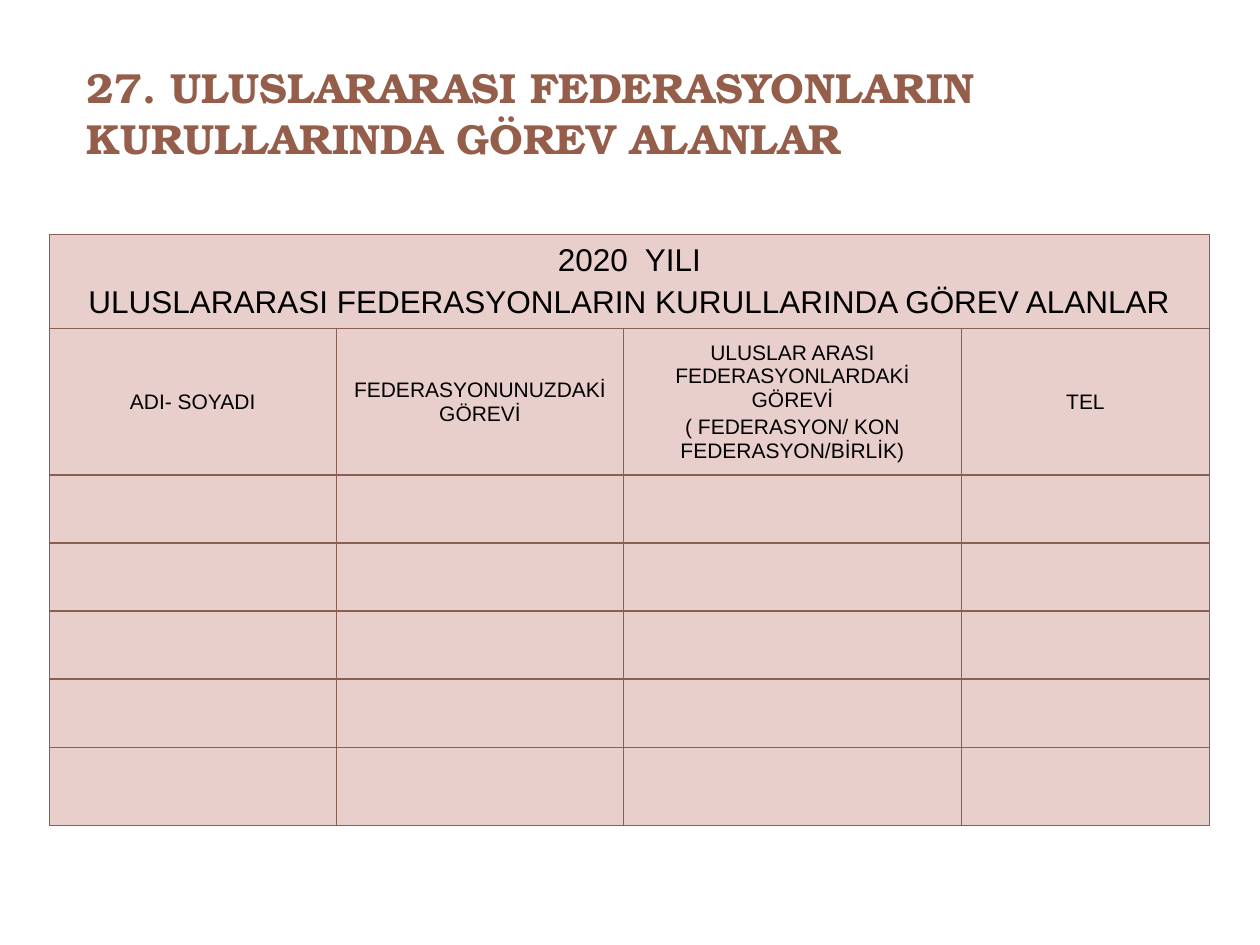
from dataclasses import dataclass

from lxml.etree import SubElement as Sub
from pptx import Presentation
from pptx.dml.color import RGBColor as RGB
from pptx.enum.text import MSO_ANCHOR as Anchor, PP_ALIGN as Align
from pptx.oxml.ns import qn
from pptx.util import Inches, Pt


@dataclass(frozen=True)
class Theme:
    ink: str = "000000"
    brand: str = "955E4B"
    fill: str = "E9CFCB"
    rule: str = "896154"
    serif: str = "TeX Gyre Bonum"
    sans: str = "Arial"
    big: int = 24
    mid: int = 18
    small: int = 12
    line: float = 0.75


def write(frame, text, *, font, size, color, bold=False, align=Align.LEFT, before=0):
    """Put each line of text in its own paragraph; before is a share of the size."""
    frame.word_wrap = True
    for i, line in enumerate(text.split("\n")):
        para = frame.add_paragraph() if i else frame.paragraphs[0]
        para.alignment = align
        para.space_before = Pt(size * before)
        run = para.add_run()
        run.text = line
        run.font.name = font
        run.font.size = Pt(size)
        run.font.bold = bold
        run.font.color.rgb = RGB.from_string(color)


class Page:
    def __init__(self, deck, theme):
        self.theme = theme
        self.wide, self.high = deck.slide_width, deck.slide_height
        self.slide = deck.slides.add_slide(deck.slide_layouts[6])

    def box(self, x, y, w, h):
        """Turn shares of the slide into lengths."""
        return (round(x * self.wide), round(y * self.high),
                round(w * self.wide), round(h * self.high))

    def title(self, text, area):
        frame = self.slide.shapes.add_textbox(*self.box(*area)).text_frame
        frame.vertical_anchor = Anchor.TOP
        write(frame, text, font=self.theme.serif, size=self.theme.big,
              color=self.theme.brand, bold=True)

    def table(self, area, cols, rows):
        """Add a plain table; cols and rows are inches."""
        shape = self.slide.shapes.add_table(len(rows), len(cols), *self.box(*area))
        table = shape.table
        table.first_row = table.horz_banding = False
        for col, width in zip(table.columns, cols):
            col.width = Inches(width)
        for row, height in zip(table.rows, rows):
            row.height = Inches(height)
        for cell in table.iter_cells():
            self.edge(cell)
            cell.fill.solid()
            cell.fill.fore_color.rgb = RGB.from_string(self.theme.fill)
        return table

    def edge(self, cell):
        props = cell._tc.get_or_add_tcPr()
        for side in ("a:lnL", "a:lnR", "a:lnT", "a:lnB"):
            line = Sub(props, qn(side), w=str(Pt(self.theme.line)))
            Sub(Sub(line, qn("a:solidFill")), qn("a:srgbClr"), val=self.theme.rule)

    def label(self, cell, text, size):
        cell.vertical_anchor = Anchor.MIDDLE
        write(cell.text_frame, text, font=self.theme.sans, size=size,
              color=self.theme.ink, align=Align.CENTER, before=0.2)


def main():
    deck = Presentation()
    deck.slide_width, deck.slide_height = Inches(10), Inches(7.5)
    theme = Theme()
    page = Page(deck, theme)

    page.title("27. ULUSLARARASI FEDERASYONLARIN KURULLARINDA GÖREV ALANLAR",
               (0.059, 0.059, 0.9, 0.167))

    table = page.table((0.039, 0.248, 0.921, 0.62),
                       cols=[2.28, 2.28, 2.68, 1.97],
                       rows=[0.7, 1.16] + [0.54] * 4 + [0.62])
    table.cell(0, 0).merge(table.cell(0, 3))
    page.label(table.cell(0, 0),
               "2020  YILI\nULUSLARARASI FEDERASYONLARIN KURULLARINDA GÖREV ALANLAR",
               theme.mid)
    heads = ["ADI- SOYADI",
             "FEDERASYONUNUZDAKİ GÖREVİ",
             "ULUSLAR ARASI FEDERASYONLARDAKİ GÖREVİ\n"
             "( FEDERASYON/ KON FEDERASYON/BİRLİK)",
             "TEL"]
    for col, head in enumerate(heads):
        page.label(table.cell(1, col), head, theme.small)

    deck.save("out.pptx")


if __name__ == "__main__":
    main()
